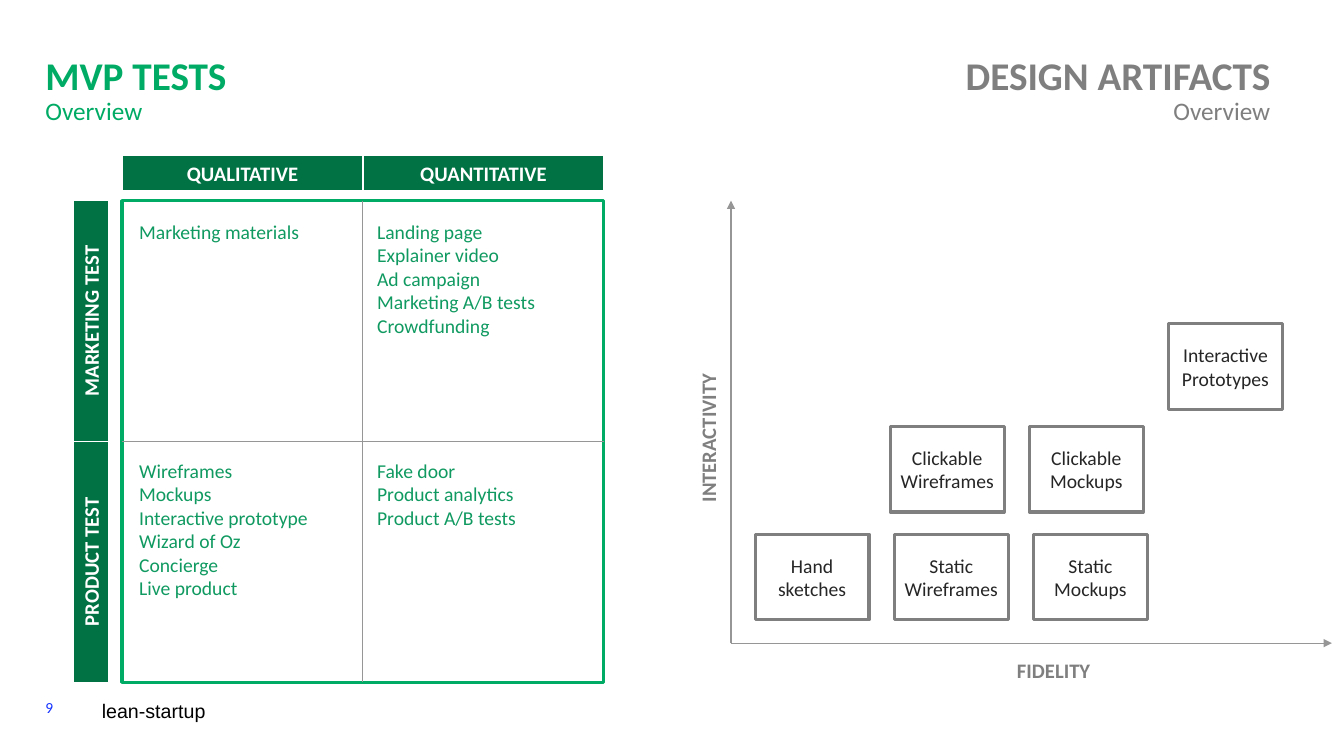
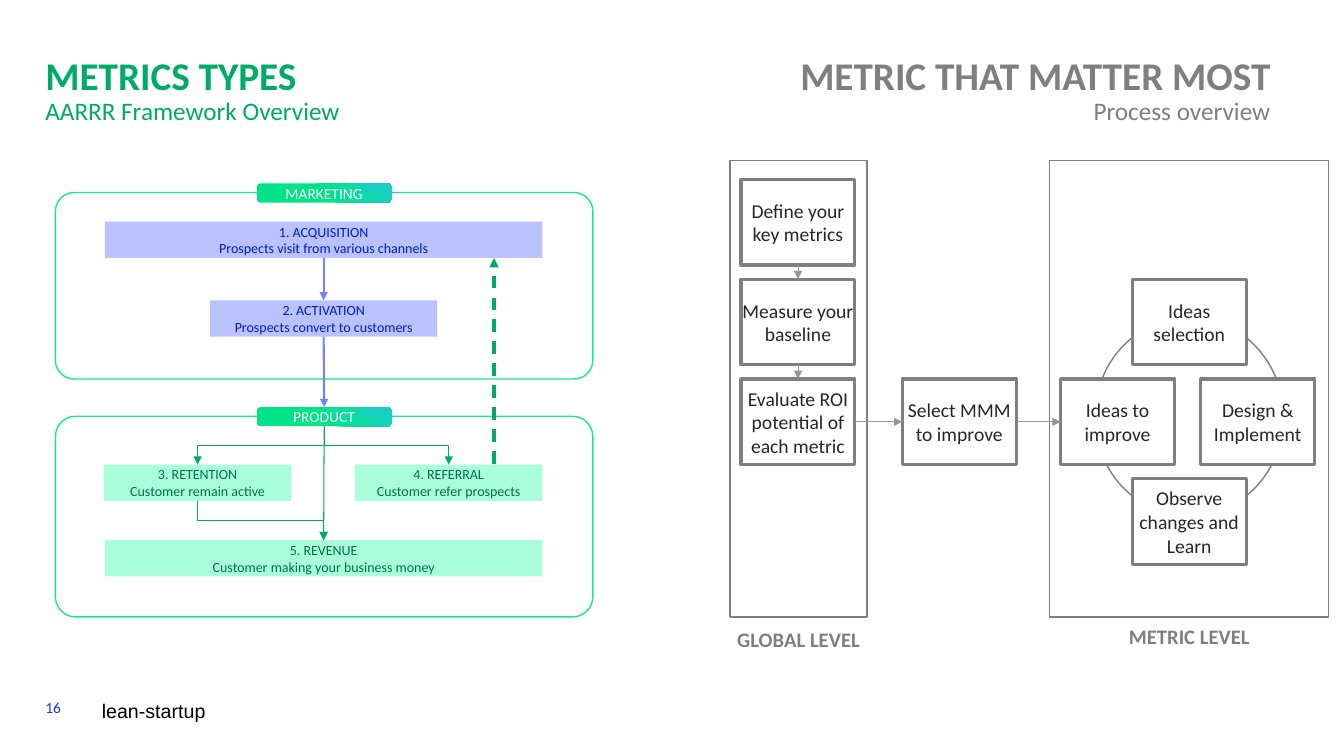
"""Build two lean-startup overview slides: MVP tests and metrics types."""
from lxml.etree import SubElement
from pptx import Presentation
from pptx.dml.color import RGBColor
from pptx.enum.dml import MSO_LINE
from pptx.enum.shapes import MSO_CONNECTOR, MSO_SHAPE
from pptx.enum.text import MSO_ANCHOR, MSO_AUTO_SIZE, PP_ALIGN
from pptx.oxml.ns import qn
from pptx.util import Inches, Pt

GREEN, DARK_GREEN, TEXT_GREEN = "00AB65", "007243", "109A61"
MINT, FRAME_GREEN, LIME, TEAL = "55FFBA", "18E692", "00E487", "1ECBD0"
BLUE, DARK_BLUE, ARROW_BLUE, NUMBER_BLUE = "7788FF", "001AD0", "7283FF", "1432FF"
GRAY, LINE_GRAY, INK, WHITE, BLACK = "7F7F7F", "969696", "262626", "FFFFFF", "000000"
FONT = "Calibri"
TOP, LEFT, BOTTOM, RIGHT = range(4)

FOOTER = "lean-startup"
LEFT_MARGIN, RIGHT_EDGE, TITLE_WIDTH = 0.45, 12.6, 5

COLUMNS = ["QUALITATIVE", "QUANTITATIVE"]
ROWS = ["MARKETING TEST", "PRODUCT TEST"]
TESTS = [
    [
        ["Marketing materials"],
        ["Landing page", "Explainer video", "Ad campaign", "Marketing A/B tests", "Crowdfunding"],
    ],
    [
        ["Wireframes", "Mockups", "Interactive prototype", "Wizard of Oz", "Concierge", "Live product"],
        ["Fake door", "Product analytics", "Product A/B tests"],
    ],
]
GRID_LEFT, GRID_TOP, CELL, BAND = 1.21, 1.99, 2.39, 0.35

ARTIFACT_STEP = 1.38
ARTIFACT_ROWS = [
    (7.49, 5.3, ["Hand sketches", "Static Wireframes", "Static Mockups"]),
    (8.83, 4.23, ["Clickable Wireframes", "Clickable Mockups"]),
    (11.59, 3.21, ["Interactive Prototypes"]),
]
AXIS_LEFT, AXIS_BOTTOM = 7.25, 6.38

FUNNEL_CENTER = 3.21
FUNNEL_FRAMES = [("MARKETING", 1.91, 1.85), ("PRODUCT", 4.13, 1.99)]
STAGES = {
    "acquisition": (FUNNEL_CENTER, 2.2, 4.34, BLUE, DARK_BLUE,
                    ["1. ACQUISITION", "Prospects visit from various channels"]),
    "activation": (FUNNEL_CENTER, 2.98, 2.25, BLUE, DARK_BLUE,
                   ["2. ACTIVATION", "Prospects convert to customers"]),
    "retention": (1.96, 4.61, 1.86, MINT, DARK_GREEN,
                  ["3. RETENTION", "Customer remain active"]),
    "referral": (4.45, 4.61, 1.86, MINT, DARK_GREEN,
                 ["4. REFERRAL", "Customer refer prospects"]),
    "revenue": (FUNNEL_CENTER, 5.36, 4.34, MINT, DARK_GREEN,
                ["5. REVENUE", "Customer making your business money"]),
}

STEP_WIDTH, STEP_HEIGHT = 1.13, 0.85
STEP_TOPS = [1.78, 2.77, 3.76, 4.75]
STEPS = {
    "define": (7.35, 0, "Define your key metrics"),
    "measure": (7.35, 1, "Measure your baseline"),
    "evaluate": (7.35, 2, "Evaluate ROI potential of each metric"),
    "select": (8.95, 2, "Select MMM to improve"),
    "ideas": (10.52, 2, "Ideas to improve"),
    "selection": (11.23, 1, "Ideas selection"),
    "design": (11.91, 2, "Design & Implement"),
    "observe": (11.23, 3, "Observe changes and Learn"),
}
STEP_LINKS = [
    ("define", BOTTOM, "measure", TOP),
    ("measure", BOTTOM, "evaluate", TOP),
    ("evaluate", RIGHT, "select", LEFT),
    ("select", RIGHT, "ideas", LEFT),
]
LEVELS = [
    ("GLOBAL LEVEL", 7.24, 1.36, 6.17),
    ("METRIC LEVEL", 10.41, 2.77, 6.14),
]


def rgb(value):
    """Turn a hex string into a colour."""
    return RGBColor.from_string(value)


def prepare_frame(frame, anchor):
    """Remove margins, wrap the text and set its vertical anchor."""
    frame.margin_left = frame.margin_right = frame.margin_top = frame.margin_bottom = 0
    frame.word_wrap = True
    frame.auto_size = MSO_AUTO_SIZE.NONE
    frame.vertical_anchor = anchor


def style_paragraph(para, size, color, align, bold=False, font=FONT):
    """Set the font and alignment of one paragraph."""
    para.alignment = align
    para.font.name = font
    para.font.size = Pt(size)
    para.font.bold = bold
    para.font.color.rgb = rgb(color)


def write(box, lines, size, color, align=PP_ALIGN.CENTER, anchor=MSO_ANCHOR.MIDDLE,
          bold=False, font=FONT):
    """Write each line as a paragraph of the box."""
    frame = box.text_frame
    prepare_frame(frame, anchor)
    frame.text = "\n".join(lines)
    for para in frame.paragraphs:
        style_paragraph(para, size, color, align, bold, font)


def add_text(page, area, lines, size, color, **style):
    """Add a text box."""
    box = page.shapes.add_textbox(*map(Inches, area))
    write(box, lines, size, color, **style)
    return box


def add_block(page, kind, area, fill=None, line=None, width=1):
    """Add a flat shape with an optional fill and outline."""
    block = page.shapes.add_shape(kind, *map(Inches, area))
    block.shadow.inherit = False
    if fill:
        block.fill.solid()
        block.fill.fore_color.rgb = rgb(fill)
    else:
        block.fill.background()
    if line:
        block.line.color.rgb = rgb(line)
        block.line.width = Pt(width)
    else:
        block.line.fill.background()
    return block


def style_line(connector, color, width, arrow=True, dash=None):
    """Colour a connector and give it an arrowhead."""
    connector.line.color.rgb = rgb(color)
    connector.line.width = Pt(width)
    if dash:
        connector.line.dash_style = dash
    properties = connector._element.spPr
    if arrow:
        SubElement(properties.find(qn("a:ln")), qn("a:tailEnd"), type="triangle")
    SubElement(properties, qn("a:effectLst"))


def add_line(page, start, end, color=LINE_GRAY, width=0.75, **style):
    """Add a straight line between two points."""
    connector = page.shapes.add_connector(MSO_CONNECTOR.STRAIGHT, *map(Inches, start + end))
    style_line(connector, color, width, **style)


def link(page, source, source_side, target, target_side, color=LINE_GRAY, width=0.75):
    """Glue a straight arrow to the sides of two shapes."""
    connector = page.shapes.add_connector(MSO_CONNECTOR.STRAIGHT, 0, 0, 0, 0)
    connector.begin_connect(source, source_side)
    connector.end_connect(target, target_side)
    style_line(connector, color, width)


def add_elbow(page, source, target, color, width=0.75):
    """Add a bent arrow that leaves downwards and arrives downwards."""
    start_x, end_x = (shape.left + shape.width // 2 for shape in (source, target))
    start_y, end_y = source.top + source.height, target.top
    middle_x, middle_y = (start_x + end_x) // 2, (start_y + end_y) // 2
    half_height = abs(end_x - start_x) // 2
    to_right = end_x > start_x
    reach = (end_y - start_y) // 2 * (-1 if to_right else 1)
    connector = page.shapes.add_connector(
        MSO_CONNECTOR.ELBOW, middle_x - reach, middle_y - half_height,
        middle_x + reach, middle_y + half_height)
    degrees = 270 if to_right else 90
    connector._element.spPr.find(qn("a:xfrm")).set("rot", str(degrees * 60000))
    style_line(connector, color, width)


def add_heading(box, left, heading, subtitle, color, align):
    """Place a two-line heading with a bold first line."""
    box.left, box.top, box.width, box.height = map(Inches, (left, 0.56, TITLE_WIDTH, 0.85))
    prepare_frame(box.text_frame, MSO_ANCHOR.TOP)
    para = box.text_frame.paragraphs[0]
    style_paragraph(para, 18, color, align)
    para.line_spacing = 0.9
    span = para.add_run()
    span.text = heading
    span.font.size = Pt(28)
    span.font.bold = True
    para.add_line_break()
    para.add_run().text = subtitle


def add_page(deck, number, left_heading, right_heading):
    """Add a slide with both headings and the footer."""
    page = deck.slides.add_slide(deck.slide_layouts[5])
    add_heading(page.shapes.title, LEFT_MARGIN, *left_heading, GREEN, PP_ALIGN.LEFT)
    right_box = page.shapes.add_textbox(0, 0, 0, 0)
    add_heading(right_box, RIGHT_EDGE - TITLE_WIDTH, *right_heading, GRAY, PP_ALIGN.RIGHT)
    corner = {"align": PP_ALIGN.LEFT, "anchor": MSO_ANCHOR.TOP}
    add_text(page, (LEFT_MARGIN, 6.93, 0.55, 0.3), [str(number)], 11, NUMBER_BLUE, **corner)
    add_text(page, (1.01, 6.93, 3.97, 0.3), [FOOTER], 14, BLACK, font="Arial", **corner)
    return page


def add_band(page, center_x, center_y, label, rotation=0):
    """Add a green header band of the test grid."""
    area = (center_x - CELL / 2, center_y - BAND / 2, CELL, BAND)
    band = add_block(page, MSO_SHAPE.RECTANGLE, area, DARK_GREEN, WHITE)
    band.rotation = rotation
    write(band, [label], 14.7, WHITE, bold=True)


def add_caption(page, center_x, top, label):
    """Add a bold gray caption centred on a position."""
    area = (center_x - CELL / 2, top, CELL, BAND)
    return add_text(page, area, [label], 14.7, GRAY, bold=True)


def add_step(page, left, top, label):
    """Add a gray outlined box with a label."""
    area = (left, top, STEP_WIDTH, STEP_HEIGHT)
    step = add_block(page, MSO_SHAPE.RECTANGLE, area, WHITE, GRAY, 2.25)
    write(step, [label], 14, INK)
    return step


def draw_test_grid(page):
    """Draw the two-by-two grid of tests."""
    size = 2 * CELL
    add_block(page, MSO_SHAPE.RECTANGLE, (GRID_LEFT, GRID_TOP, size, size), line=GREEN, width=2.25)
    middle_x, middle_y = GRID_LEFT + CELL, GRID_TOP + CELL
    add_line(page, (middle_x, GRID_TOP), (middle_x, GRID_TOP + size), arrow=False)
    add_line(page, (GRID_LEFT, middle_y), (GRID_LEFT + size, middle_y), arrow=False)
    for index, (column, row) in enumerate(zip(COLUMNS, ROWS)):
        offset = (index + 0.5) * CELL
        add_band(page, GRID_LEFT + offset, 1.72, column)
        add_band(page, 0.9, GRID_TOP + offset, row, rotation=270)
    for top, cells in zip((2.18, 4.55), TESTS):
        for left, names in zip((1.38, 3.74), cells):
            add_text(page, (left, top, 2.05, 1.99), names, 14, TEXT_GREEN,
                     align=PP_ALIGN.LEFT, anchor=MSO_ANCHOR.TOP)


def draw_artifacts(page):
    """Draw the design artifacts on their two axes."""
    origin = (AXIS_LEFT, AXIS_BOTTOM)
    add_line(page, origin, (13.21, AXIS_BOTTOM))
    add_line(page, origin, (AXIS_LEFT, GRID_TOP))
    add_caption(page, 10.45, 6.47, "FIDELITY")
    add_caption(page, 7.02, 4.17, "INTERACTIVITY").rotation = 270
    for left, top, names in ARTIFACT_ROWS:
        for index, name in enumerate(names):
            add_step(page, left + index * ARTIFACT_STEP, top, name)


def draw_funnel(page):
    """Draw the five stages in their marketing and product frames."""
    shapes = {}
    for label, top, height in FUNNEL_FRAMES:
        frame = add_block(page, MSO_SHAPE.ROUNDED_RECTANGLE, (0.55, top, 5.33, height),
                          line=FRAME_GREEN)
        frame.adjustments[0] = 0.1
        tag = add_block(page, MSO_SHAPE.ROUNDED_RECTANGLE,
                        (FUNNEL_CENTER - 0.66, top - 0.09, 1.33, 0.19))
        tag.fill.gradient()
        tag.fill.gradient_angle = 45
        for stop, position, color in zip(tag.fill.gradient_stops, (0.5, 1), (LIME, TEAL)):
            stop.position = position
            stop.color.rgb = rgb(color)
        write(tag, [label], 11, WHITE)
        shapes[label] = tag
    for name, (center, top, width, fill, color, lines) in STAGES.items():
        stage = add_block(page, MSO_SHAPE.RECTANGLE, (center - width / 2, top, width, 0.36), fill)
        tint = stage._element.spPr.find(qn("a:solidFill")).find(qn("a:srgbClr"))
        SubElement(tint, qn("a:alpha"), val="50000")
        write(stage, lines, 10, color)
        shapes[name] = stage
    add_line(page, (4.9, 4.6), (4.9, 2.56), GREEN, 2.25, dash=MSO_LINE.DASH)
    link(page, shapes["acquisition"], BOTTOM, shapes["activation"], TOP, ARROW_BLUE, 1.5)
    link(page, shapes["activation"], BOTTOM, shapes["PRODUCT"], TOP, ARROW_BLUE, 1.5)
    link(page, shapes["PRODUCT"], BOTTOM, shapes["revenue"], TOP, GREEN)
    for source, target in (("PRODUCT", "retention"), ("PRODUCT", "referral"),
                           ("retention", "revenue")):
        add_elbow(page, shapes[source], shapes[target], GREEN)


def draw_process(page):
    """Draw the metric process with its two levels."""
    add_block(page, MSO_SHAPE.OVAL, (10.86, 3.15, 1.87, 1.97), line=GRAY)
    steps = {name: add_step(page, left, STEP_TOPS[row], label)
             for name, (left, row, label) in STEPS.items()}
    for label, left, width, caption_top in LEVELS:
        add_block(page, MSO_SHAPE.RECTANGLE, (left, 1.59, width, 4.53), line=GRAY)
        add_caption(page, left + width / 2, caption_top, label)
    for source, source_side, target, target_side in STEP_LINKS:
        link(page, steps[source], source_side, steps[target], target_side)


def main():
    """Build and save the deck."""
    deck = Presentation()
    deck.slide_width, deck.slide_height = Inches(13.33), Inches(7.5)
    page = add_page(deck, 9, ("MVP TESTS", "Overview"), ("DESIGN ARTIFACTS", "Overview"))
    draw_test_grid(page)
    draw_artifacts(page)
    page = add_page(deck, 16, ("METRICS TYPES", "AARRR Framework Overview"),
                    ("METRIC THAT MATTER MOST", "Process overview"))
    draw_funnel(page)
    draw_process(page)
    deck.save("out.pptx")


if __name__ == "__main__":
    main()
